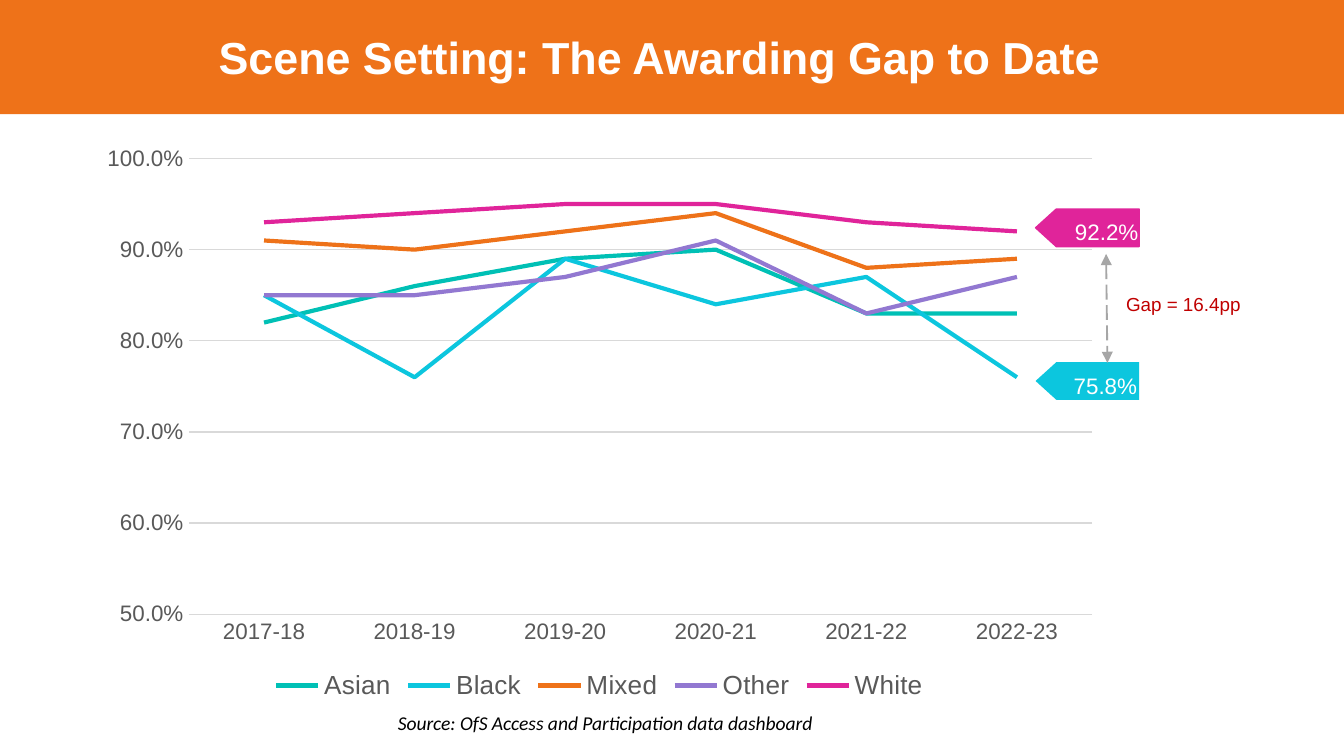
from dataclasses import dataclass

from lxml import etree
from pptx import Presentation
from pptx.chart.data import CategoryChartData
from pptx.dml.color import RGBColor
from pptx.enum.chart import XL_CHART_TYPE, XL_LEGEND_POSITION, XL_TICK_MARK
from pptx.enum.dml import MSO_LINE
from pptx.enum.shapes import MSO_CONNECTOR, MSO_SHAPE
from pptx.enum.text import MSO_ANCHOR, MSO_AUTO_SIZE, PP_ALIGN
from pptx.oxml import parse_xml
from pptx.oxml.ns import nsdecls, qn
from pptx.util import Inches, Pt

LINE_CHART = XL_CHART_TYPE.LINE
LEGEND_BOTTOM = XL_LEGEND_POSITION.BOTTOM
NO_TICKS = XL_TICK_MARK.NONE
LONG_DASH = MSO_LINE.LONG_DASH
STRAIGHT = MSO_CONNECTOR.STRAIGHT
RECTANGLE = MSO_SHAPE.RECTANGLE
FLAG = MSO_SHAPE.FLOWCHART_OFFPAGE_CONNECTOR
MIDDLE = MSO_ANCHOR.MIDDLE
GROW = MSO_AUTO_SIZE.SHAPE_TO_FIT_TEXT
CENTER = PP_ALIGN.CENTER


@dataclass(frozen=True)
class Theme:
    font: str = "Arial"
    source_font: str = "Calibri"
    orange: str = "EE7219"
    teal: str = "00C0B5"
    cyan: str = "0CC6DE"
    purple: str = "9278D1"
    pink: str = "E0249A"
    white: str = "FFFFFF"
    black: str = "000000"
    red: str = "C00000"
    axis_text: str = "595959"
    grid: str = "D9D9D9"
    arrow: str = "A6A6A6"
    title_size: float = 24
    legend_size: float = 14
    label_size: float = 12
    source_size: float = 10.5
    gap_size: float = 10.1
    chart_size: float = 10


THEME = Theme()
YEARS = ["2017-18", "2018-19", "2019-20", "2020-21", "2021-22", "2022-23"]
AWARD_RATES = {
    "Asian": (THEME.teal, [0.82, 0.86, 0.89, 0.9, 0.83, 0.83]),
    "Black": (THEME.cyan, [0.85, 0.76, 0.89, 0.84, 0.87, 0.76]),
    "Mixed": (THEME.orange, [0.91, 0.9, 0.92, 0.94, 0.88, 0.89]),
    "Other": (THEME.purple, [0.85, 0.85, 0.87, 0.91, 0.83, 0.87]),
    "White": (THEME.pink, [0.93, 0.94, 0.95, 0.95, 0.93, 0.92]),
}
PLOT_AREA = {"x": 0.1, "y": 0.04, "w": 0.88, "h": 0.8}


class SlideBuilder:
    def __init__(self, slide, theme):
        self.slide = slide
        self.theme = theme

    def style_font(self, font, size, color, name=None):
        font.name = name or self.theme.font
        font.size = Pt(size)
        font.color.rgb = RGBColor.from_string(color)

    def style_line(self, line, color, width):
        line.color.rgb = RGBColor.from_string(color)
        line.width = Pt(width)

    def set_insets(self, frame, left, top, right, bottom):
        frame.margin_left, frame.margin_top = Inches(left), Inches(top)
        frame.margin_right, frame.margin_bottom = Inches(right), Inches(bottom)

    def text(self, words, box, size, color, font=None, shapes=None):
        parent = shapes or self.slide.shapes
        frame = parent.add_textbox(*map(Inches, box)).text_frame
        frame.word_wrap = True
        frame.auto_size = GROW
        frame.text = words
        self.style_font(frame.paragraphs[0].font, size, color, font)
        return frame

    def shape(self, kind, box, color, shapes=None):
        parent = shapes or self.slide.shapes
        shape = parent.add_shape(kind, *map(Inches, box))
        shape.shadow.inherit = False
        shape.fill.solid()
        shape.fill.fore_color.rgb = RGBColor.from_string(color)
        shape.line.fill.background()
        return shape

    def source(self, words):
        frame = self.text(words, (2.89, 5.25, 5.54, 0.25), self.theme.source_size,
                          self.theme.black, self.theme.source_font)
        self.set_insets(frame, 0.07, 0.04, 0.07, 0.04)
        frame.paragraphs[0].font.italic = True

    def flag(self, value, top, text_left, text_top, color, outlined=False):
        members = self.slide.shapes.add_group_shape().shapes
        flag = self.shape(FLAG, (7.95, top, 0.28, 0.77), color, members)
        flag.rotation = 90
        if outlined:
            self.style_line(flag.line, color, 0.75)
        self.text(value, (text_left, text_top, 0.69, 0.28), self.theme.label_size,
                  self.theme.white, shapes=members)

    def double_arrow(self, start, end):
        arrow = self.slide.shapes.add_connector(STRAIGHT, *map(Inches, start + end))
        self.style_line(arrow.line, self.theme.arrow, 1)
        arrow.line.dash_style = LONG_DASH
        outline = arrow.line._get_or_add_ln()
        for tip in ("a:headEnd", "a:tailEnd"):
            etree.SubElement(outline, qn(tip), type="triangle")
        etree.SubElement(arrow._element.spPr, qn("a:effectLst"))

    def line_chart(self, categories, series_by_group, box):
        data = CategoryChartData(number_format="0.0%")
        data.categories = categories
        for group, (_, rates) in series_by_group.items():
            data.add_series(group, rates)
        chart = self.slide.shapes.add_chart(LINE_CHART, *map(Inches, box), data).chart
        self.style_font(chart.font, self.theme.chart_size, self.theme.black)
        chart.has_title = False
        chart.has_legend = True
        chart.legend.position = LEGEND_BOTTOM
        chart.legend.include_in_layout = False
        self.style_font(chart.legend.font, self.theme.legend_size, self.theme.axis_text)
        chart.plots[0].vary_by_categories = False
        for series, (color, _) in zip(chart.plots[0].series, series_by_group.values()):
            series.smooth = False
            self.style_line(series.format.line, color, 2.25)
        self.axes(chart)
        self.place_plot(chart)

    def axes(self, chart):
        years, rates = chart.category_axis, chart.value_axis
        for axis in (years, rates):
            axis.major_tick_mark = axis.minor_tick_mark = NO_TICKS
            self.style_font(axis.tick_labels.font, self.theme.label_size, self.theme.axis_text)
        self.style_line(years.format.line, self.theme.grid, 0.75)
        rates.format.line.fill.background()
        rates.minimum_scale, rates.maximum_scale, rates.major_unit = 0.5, 1, 0.1
        rates.tick_labels.number_format = "0.0%"
        rates.tick_labels.number_format_is_linked = False
        self.style_line(rates.major_gridlines.format.line, self.theme.grid, 0.75)

    def place_plot(self, chart):
        plot_area = chart._chartSpace.chart.plotArea
        for old_layout in plot_area.findall(qn("c:layout")):
            plot_area.remove(old_layout)
        sizes = "".join(f'<c:{side} val="{share}"/>' for side, share in PLOT_AREA.items())
        plot_area.insert(0, parse_xml(
            f'<c:layout {nsdecls("c")}><c:manualLayout><c:layoutTarget val="inner"/>'
            f'<c:xMode val="edge"/><c:yMode val="edge"/>{sizes}</c:manualLayout></c:layout>'))

    def title_bar(self, words):
        bar = self.shape(RECTANGLE, (0, -0.01, 10, 0.86), self.theme.orange)
        frame = bar.text_frame
        frame.word_wrap = True
        frame.vertical_anchor = MIDDLE
        self.set_insets(frame, 0.07, 0.04, 0.26, 0.04)
        frame.text = words
        title = frame.paragraphs[0]
        title.alignment = CENTER
        self.style_font(title.font, self.theme.title_size, self.theme.white)
        title.font.bold = True


def main():
    deck = Presentation()
    deck.slide_width = Inches(10)
    deck.slide_height = deck.slide_width * 9 // 16
    builder = SlideBuilder(deck.slides.add_slide(deck.slide_layouts[6]), THEME)
    builder.source("Source: OfS Access and Participation data dashboard")
    builder.flag("92.2%", 1.31, 7.9, 1.57, THEME.pink, outlined=True)
    builder.flag("75.8%", 2.45, 7.89, 2.72, THEME.cyan)
    builder.double_arrow((8.23, 1.89), (8.24, 2.7))
    builder.text("Gap = 16.4pp", (8.28, 2.13, 1.31, 0.27), THEME.gap_size, THEME.red)
    builder.line_chart(YEARS, AWARD_RATES, (0.64, 1.01, 7.64, 4.24))
    builder.title_bar("Scene Setting: The Awarding Gap to Date")
    deck.save("out.pptx")


if __name__ == "__main__":
    main()
